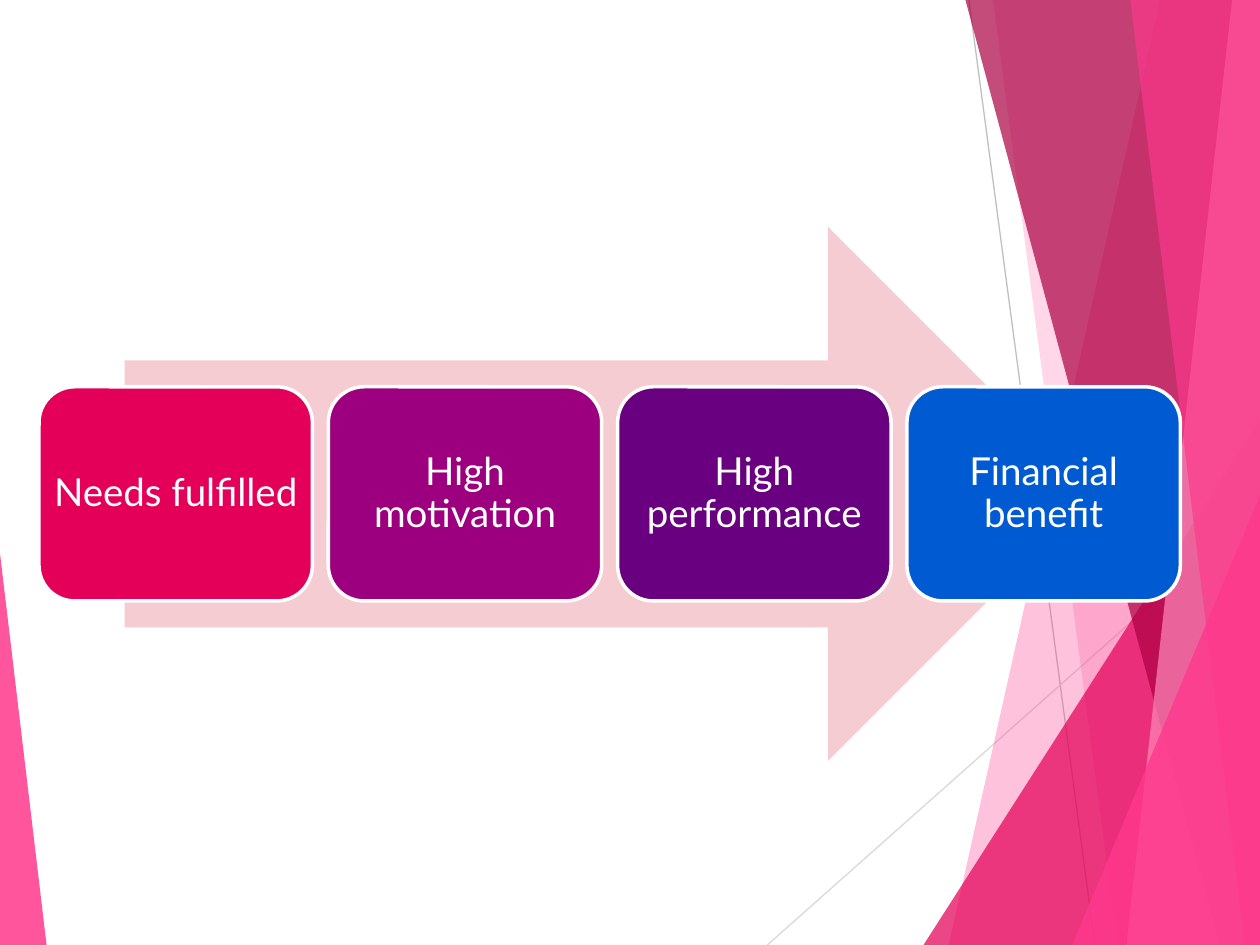
from lxml import etree
from pptx import Presentation
from pptx.dml.color import RGBColor
from pptx.enum.shapes import MSO_CONNECTOR, MSO_SHAPE
from pptx.enum.text import MSO_ANCHOR, PP_ALIGN
from pptx.oxml.ns import qn
from pptx.util import Inches, Pt


def rgb(value):
    return RGBColor.from_string(value)


def paint(sp, color, alpha=100):
    sp.shadow.inherit = False
    sp.line.fill.background()
    sp.fill.solid()
    sp.fill.fore_color.rgb = rgb(color)
    if alpha < 100:
        clr = sp.fill._xPr.find(qn("a:solidFill"))[0]
        etree.SubElement(clr, qn("a:alpha")).set("val", str(alpha * 1000))


prs = Presentation()
prs.slide_width = Inches(10)
prs.slide_height = Inches(7.5)
s = prs.slides.add_slide(prs.slide_layouts[6])

thin_lines = [
    (7.69, 0, 8.69, 7.5, "BFBFBF"),
    (10, 4.03, 6.09, 7.5, "D9D9D9"),
]
for x1, y1, x2, y2, color in thin_lines:
    line = s.shapes.add_connector(
        MSO_CONNECTOR.STRAIGHT, Inches(x1), Inches(y1), Inches(x2), Inches(y2))
    line.line.color.rgb = rgb(color)
    line.line.width = Pt(0.75)
    etree.SubElement(line._element.spPr, qn("a:effectLst"))

facets = [
    ("band", (9.21, 7.53), "FF388C", 30),
    ("band", (7.88, 8.87), "FF388C", 20),
    ("triangle", (7.33, 3.33, 2.67, 4.17, 1), "E40059", 72),
    ("band", (7.66, 9.68), "AB0043", 70),
    ("band", (9.78, 8.94), "FF88BA", 70),
    ("band", (8.97, 9.88), "FF388C", 65),
    ("triangle", (8.51, 3.93, 1.49, 3.57, 1), "FF388C", 80),
    ("triangle", (0, 4.39, 0.37, 3.11, 0), "FF388C", 85),
]
for kind, geometry, color, alpha in facets:
    if kind == "band":
        top, bottom = geometry
        fb = s.shapes.build_freeform(Inches(top), Inches(-0.01))
        fb.add_line_segments(
            [(Inches(x), Inches(y)) for x, y in [(10, -0.01), (10, 7.5), (bottom, 7.5)]])
        sp = fb.convert_to_shape()
    else:
        *box, apex = geometry
        sp = s.shapes.add_shape(MSO_SHAPE.ISOSCELES_TRIANGLE, *[Inches(v) for v in box])
        sp.adjustments[0] = apex
    paint(sp, color, alpha)

arrow = s.shapes.add_shape(
    MSO_SHAPE.RIGHT_ARROW, Inches(0.99), Inches(1.8), Inches(7.7), Inches(4.24))
paint(arrow, "F5CCD1")

steps = [
    ("Needs fulfilled", "E40059"),
    ("High motivation", "9C007F"),
    ("High performance", "68007F"),
    ("Financial benefit", "005BD3"),
]
for i, (text, color) in enumerate(steps):
    sp = s.shapes.add_shape(
        MSO_SHAPE.ROUNDED_RECTANGLE,
        Inches(0.31 + i * 2.296), Inches(3.07), Inches(2.17), Inches(1.7))
    paint(sp, color)
    sp.line.color.rgb = rgb("FFFFFF")
    sp.line.width = Pt(2)
    tf = sp.text_frame
    tf.word_wrap = True
    tf.vertical_anchor = MSO_ANCHOR.MIDDLE
    tf.margin_left = tf.margin_right = tf.margin_top = tf.margin_bottom = Inches(0.01)
    tf.text = text
    p = tf.paragraphs[0]
    p.alignment = PP_ALIGN.CENTER
    p.line_spacing = 0.9
    r = p.runs[0]
    r.font.name = "Lato"
    r.font.size = Pt(22)
    r.font.color.rgb = rgb("FFFFFF")

prs.save("out.pptx")
